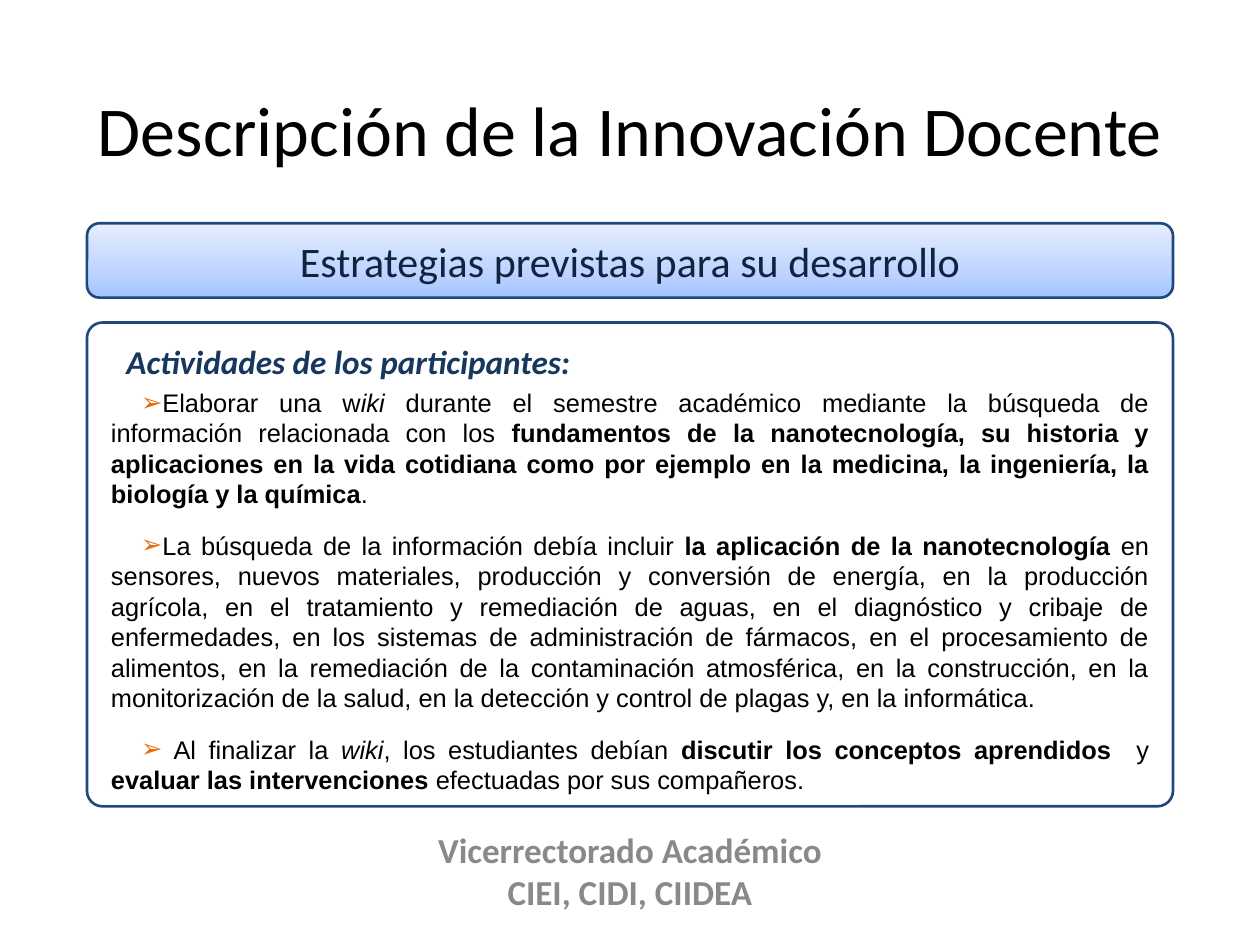
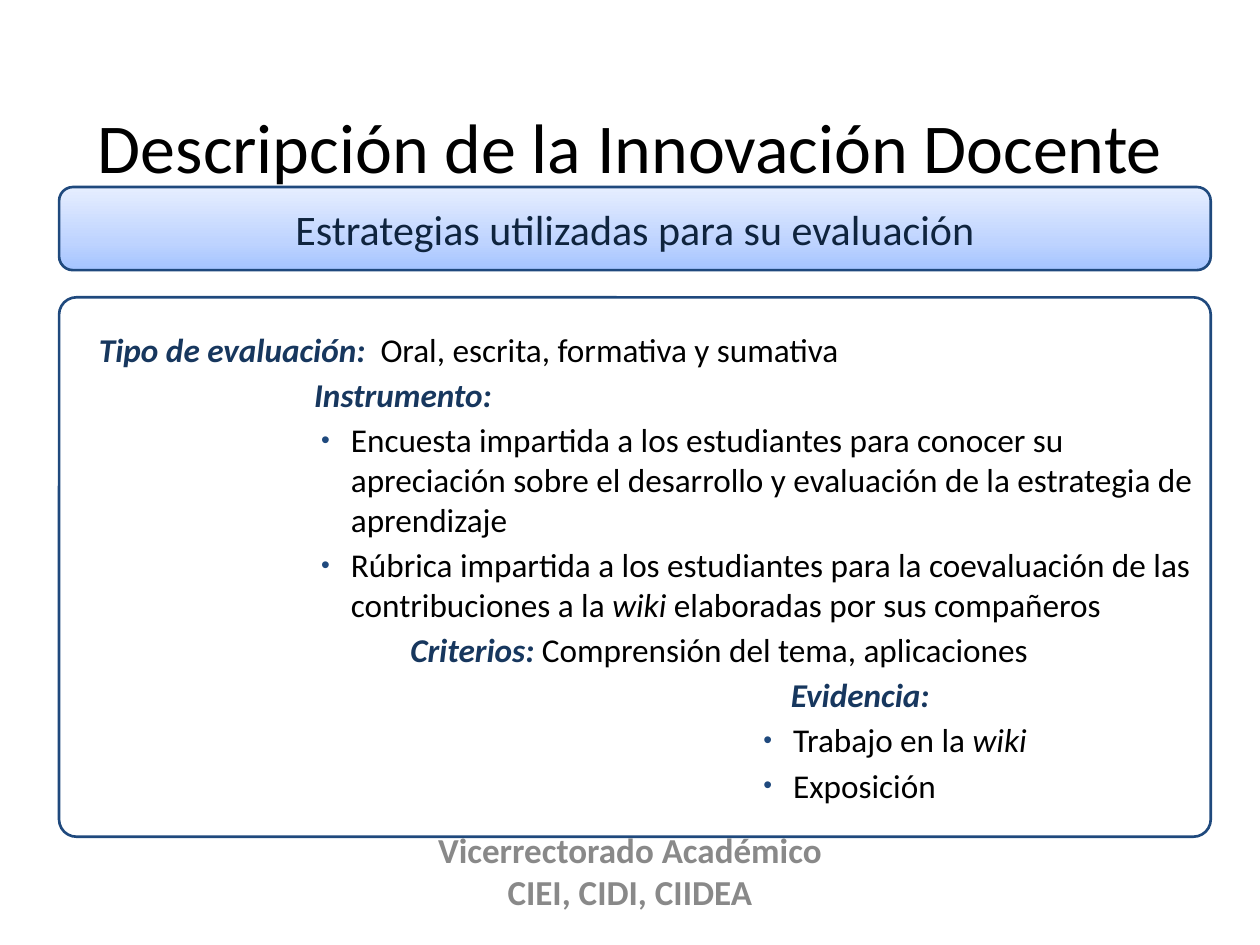
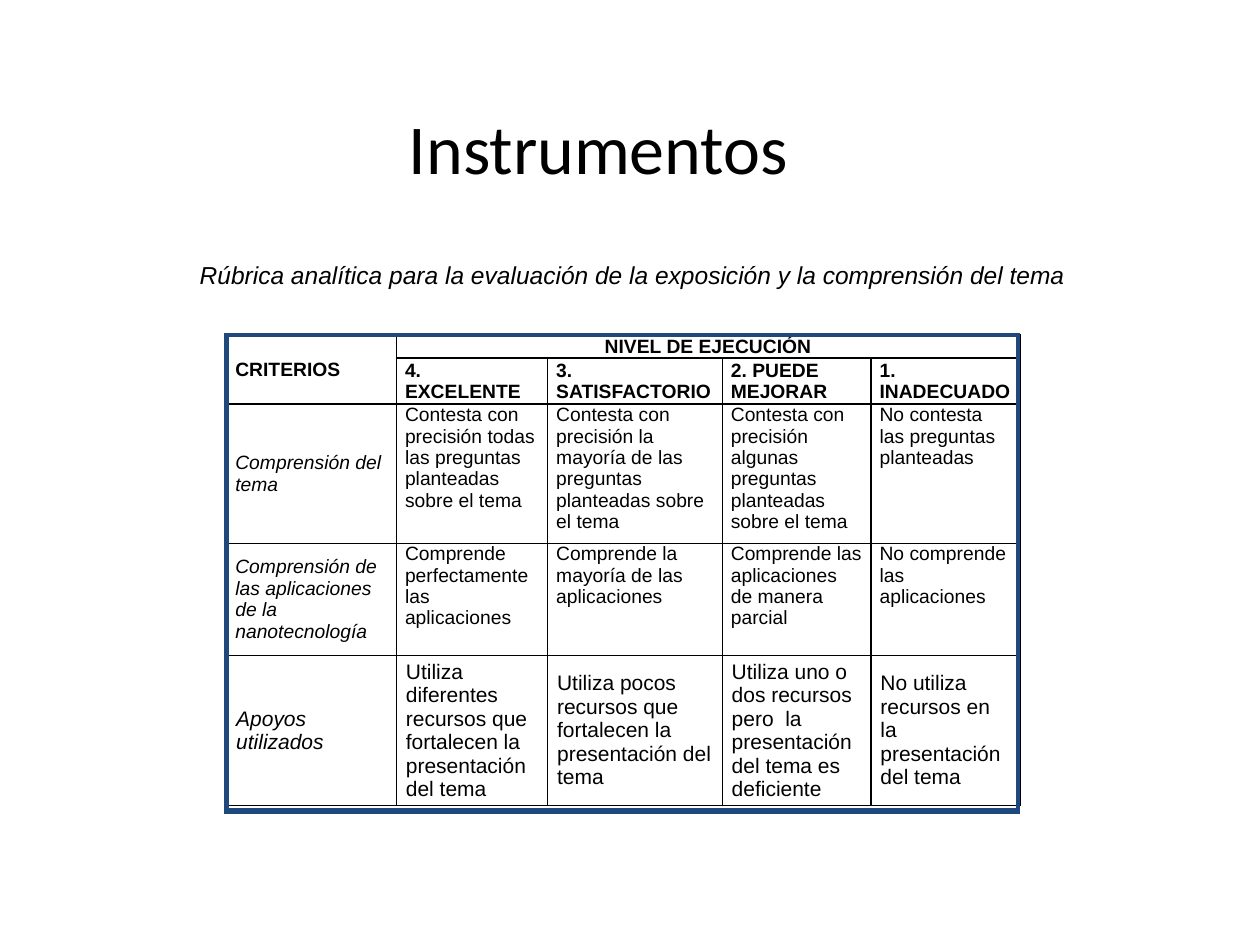
import copy
from dataclasses import dataclass

import lxml.etree
import pptx
import pptx.dml.color
import pptx.enum.shapes
import pptx.enum.text
import pptx.oxml.ns
import pptx.util

Pt = pptx.util.Pt
qn = pptx.oxml.ns.qn
ALIGN = pptx.enum.text.PP_ALIGN
ANCHOR = pptx.enum.text.MSO_ANCHOR
SHAPE = pptx.enum.shapes.MSO_SHAPE


class Theme:
    heading_font = "Calibri"
    text_font = "Arial"
    ink = "000000"
    paper = "FFFFFF"
    outline = "1F497D"
    label = "17375E"
    banner_ink = "0F243E"
    footer_ink = "898989"
    arrow = "E46C0A"
    gradient = [(0, "A4C4FF"), (0.35, "BFD4FF"), (1, "E6EEFF")]
    title_size = 40
    banner_size = 24
    footer_size = 20
    list_size = 19
    caption_size = 14
    activity_size = 14.5
    table_size = 11
    support_size = 12


@dataclass
class Box:
    left: float
    top: float
    width: float
    height: float

    def lengths(self):
        return [Pt(n) for n in (self.left, self.top, self.width, self.height)]


@dataclass
class Item:
    """One paragraph: spans are (text, style), style holding b, i or l (label)."""
    spans: list
    indent: float = 0
    first: float = 0
    bullet: str = ""


def rgb(value):
    return pptx.dml.color.RGBColor.from_string(value)


# ---- Text ----
def style(span, font, size, color=Theme.ink, bold=False, italic=False):
    span.font.name = font
    span.font.size = Pt(size)
    span.font.color.rgb = rgb(color)
    span.font.bold = bold
    span.font.italic = italic


def write(frame, text, font, size, color=Theme.ink, align=ALIGN.CENTER,
          anchor=ANCHOR.MIDDLE, **emphasis):
    frame.text = text
    frame.word_wrap = True
    frame.auto_size = pptx.enum.text.MSO_AUTO_SIZE.NONE
    frame.vertical_anchor = anchor
    for para in frame.paragraphs:
        para.alignment = align
        for span in para.runs:
            style(span, font, size, color, **emphasis)


def set_indent(para, indent, first):
    props = para._p.get_or_add_pPr()
    props.set("marL", str(int(Pt(indent))))
    props.set("indent", str(int(Pt(first))))
    return props


def set_bullet(para, item, color, percent):
    props = set_indent(para, item.indent, item.first)
    if not item.bullet:
        lxml.etree.SubElement(props, qn("a:buNone"))
        return
    tint = lxml.etree.SubElement(props, qn("a:buClr"))
    lxml.etree.SubElement(tint, qn("a:srgbClr"), val=color)
    lxml.etree.SubElement(props, qn("a:buSzPct"), val=str(percent * 1000))
    lxml.etree.SubElement(props, qn("a:buFont"), typeface=Theme.text_font)
    lxml.etree.SubElement(props, qn("a:buChar"), char=item.bullet)


def add_list(page, box, items, font, size, gap, align, bullet_color, percent):
    body = page.placeholders[1]
    body.left, body.top, body.width, body.height = box.lengths()
    frame = body.text_frame
    write(frame, "", font, size)
    for index, item in enumerate(items):
        para = frame.add_paragraph() if index else frame.paragraphs[0]
        set_bullet(para, item, bullet_color, percent)
        para.alignment = align
        para.space_before = Pt(gap if index else 0)
        para.space_after = Pt(0)
        for text, marks in item.spans:
            span = para.add_run()
            span.text = text
            label = "l" in marks
            style(span, font, size, Theme.label if label else Theme.ink,
                  bold=label or "b" in marks, italic=label or "i" in marks)


# ---- Shared regions ----
def add_title(page, box, text):
    title = page.shapes.title
    title.left, title.top, title.width, title.height = box.lengths()
    write(title.text_frame, text, Theme.heading_font, Theme.title_size)


def add_rounded(page, box):
    shape = page.shapes.add_shape(SHAPE.ROUNDED_RECTANGLE, *box.lengths())
    shape.shadow.inherit = False
    shape.fill.background()
    shape.line.color.rgb = rgb(Theme.outline)
    shape.line.width = Pt(1.5)
    return shape


def add_panel(page, box):
    panel = add_rounded(page, box)
    panel.adjustments[0] = 0.032
    return panel


def add_banner(page, box, text):
    banner = add_rounded(page, box)
    banner.fill.gradient()
    banner.fill.gradient_angle = 90
    stops = banner._element.spPr.find(qn("a:gradFill")).find(qn("a:gsLst"))
    stops.insert(1, copy.deepcopy(stops[0]))
    for stop, (position, color) in zip(banner.fill.gradient_stops, Theme.gradient):
        stop.position = position
        stop.color.rgb = rgb(color)
    write(banner.text_frame, text, Theme.heading_font, Theme.banner_size,
          Theme.banner_ink)


def add_footer(page):
    footer = page.shapes.add_textbox(*Box(142, 483.5, 436, 28).lengths())
    write(footer.text_frame, "Vicerrectorado Académico\nCIEI, CIDI, CIIDEA",
          Theme.heading_font, Theme.footer_size, Theme.footer_ink, bold=True)


def add_caption(page, box, text):
    caption = page.shapes.add_shape(SHAPE.RECTANGLE, *box.lengths())
    caption.shadow.inherit = False
    caption.fill.solid()
    caption.fill.fore_color.rgb = rgb(Theme.paper)
    caption.line.fill.background()
    frame = caption.text_frame
    write(frame, text, Theme.text_font, Theme.caption_size, italic=True)
    frame.word_wrap = False
    frame.margin_bottom = 0
    set_indent(frame.paragraphs[0], 0, 17.3)


# ---- Tables ----
def set_borders(cell, color, width):
    props = cell._tc.get_or_add_tcPr()
    for index, side in enumerate(("a:lnL", "a:lnR", "a:lnT", "a:lnB")):
        line = lxml.etree.Element(qn(side), w=str(int(Pt(width))))
        fill = lxml.etree.SubElement(line, qn("a:solidFill"))
        lxml.etree.SubElement(fill, qn("a:srgbClr"), val=color)
        props.insert(index, line)


def add_grid(page, box, widths, heights, color, line_width):
    table = page.shapes.add_table(len(heights), len(widths), *box.lengths()).table
    table.first_row = table.horz_banding = False
    for column, width in zip(table.columns, widths):
        column.width = Pt(width)
    for row, height in zip(table.rows, heights):
        row.height = Pt(height)
    for cell in table.iter_cells():
        cell.fill.background()
        set_borders(cell, color, line_width)
    return table


def add_frame(page, box, line_width):
    add_grid(page, box, [box.width], [box.height], Theme.outline, line_width)


def add_rubric(page, box, rows, widths, heights):
    table = add_grid(page, box, widths, heights, Theme.ink, 1)
    last = len(rows) - 1
    for r, texts in enumerate(rows):
        for c, text in enumerate(texts):
            cell = table.cell(r, c)
            cell.margin_left = cell.margin_right = Pt(5.4 if r == last else 4.9)
            cell.margin_top = cell.margin_bottom = 0
            centred = c == 0 or r < 2 or r == last
            cell.vertical_anchor = ANCHOR.MIDDLE if centred else ANCHOR.TOP
            cell.text = text
            for span in cell.text_frame.paragraphs[0].runs:
                style(span, Theme.text_font,
                      Theme.support_size if r == last else Theme.table_size,
                      bold=r < 2, italic=c == 0 and r > 1)
    table.cell(0, 0).merge(table.cell(1, 0))
    table.cell(0, 1).merge(table.cell(0, len(widths) - 1))
    table.cell(0, 1).text_frame.paragraphs[0].alignment = ALIGN.CENTER


# ---- Content ----
INNOVATION = "Descripción de la Innovación Docente"

ACTIVITIES = [
    [("Elaborar una w", ""), ("iki", "i"),
     (" durante el semestre académico mediante la búsqueda de información "
      "relacionada con los ", ""),
     ("fundamentos de la nanotecnología, su historia y aplicaciones en la vida "
      "cotidiana como por ejemplo en la medicina, la ingeniería, la biología y "
      "la química", "b"), (". ", "")],
    [("La búsqueda de la información debía incluir ", ""),
     ("la aplicación de la nanotecnología ", "b"),
     ("en sensores, nuevos materiales, producción y conversión de energía, en la "
      "producción agrícola, en el tratamiento y remediación de aguas, en el "
      "diagnóstico y cribaje de enfermedades, en los sistemas de administración "
      "de fármacos, en el procesamiento de alimentos, en la remediación de la "
      "contaminación atmosférica, en la construcción, en la monitorización de la "
      "salud, en la detección y control de plagas y, en la informática.", "")],
    [(" Al finalizar la ", ""), ("wiki", "i"), (", los estudiantes debían ", ""),
     ("discutir los conceptos aprendidos  ", "b"), ("y ", ""),
     ("evaluar las intervenciones", "b"),
     (" efectuadas por sus compañeros.", "")],
]

EVALUATION = [
    Item([("Tipo de evaluación:  ", "l"),
          ("Oral, escrita, formativa y sumativa", "")], 13),
    Item([("Instrumento:", "l")], 136),
    Item([("Encuesta impartida a los estudiantes para conocer su apreciación sobre "
           "el desarrollo y evaluación de la estrategia de aprendizaje", "")],
         157, -17, "•"),
    Item([("Rúbrica impartida a los estudiantes para la coevaluación de las "
           "contribuciones a la ", ""), ("wiki", "i"),
          (" elaboradas por sus compañeros", "")], 157, -17, "•"),
    Item([("Criterios: ", "l"), ("Comprensión del tema, aplicaciones", "")], 191),
    Item([("Evidencia:", "l")], 408.4),
    Item([("Trabajo en la ", ""), ("wiki", "i")], 409.7, -17, "•"),
    Item([("Exposición", "")], 409.7, -17, "•"),
]

RUBRIC = [
    ["CRITERIOS", "NIVEL DE EJECUCIÓN", "", "", ""],
    ["", "4. EXCELENTE", "3. SATISFACTORIO", "2. PUEDE MEJORAR", "1. INADECUADO"],
    ["Comprensión del tema",
     "Contesta con precisión todas las preguntas planteadas sobre el tema",
     "Contesta con precisión la mayoría de las preguntas planteadas sobre el tema",
     "Contesta con precisión algunas preguntas planteadas sobre el tema",
     "No contesta las preguntas planteadas"],
    ["Comprensión de las aplicaciones de la nanotecnología",
     "Comprende perfectamente las aplicaciones",
     "Comprende la mayoría de las aplicaciones",
     "Comprende las aplicaciones de manera parcial",
     "No comprende las aplicaciones"],
    ["Apoyos utilizados",
     "Utiliza diferentes recursos que fortalecen la presentación del tema",
     "Utiliza pocos recursos que fortalecen la presentación del tema",
     "Utiliza uno o dos recursos pero  la presentación del tema es deficiente",
     "No utiliza recursos en la presentación del tema"],
]


# ---- Slides ----
def build_activities(page):
    add_title(page, Box(0, 28.3, 720, 90), INNOVATION)
    box = Box(49.7, 184.3, 620.6, 276.5)
    panel = add_panel(page, box)
    panel.text_frame.margin_left = Pt(20)
    panel.text_frame.margin_top = Pt(7.9)
    write(panel.text_frame, "Actividades de los participantes:",
          Theme.heading_font, Theme.list_size, Theme.label, ALIGN.LEFT,
          ANCHOR.TOP, bold=True, italic=True)
    add_banner(page, Box(box.left, 127.6, box.width, 42.5),
               "Estrategias previstas para su desarrollo")
    add_footer(page)
    items = [Item(spans, 0, 17.3, "➢") for spans in ACTIVITIES]
    add_list(page, Box(box.left + 6.5, box.top + 32, box.width - 13, 242.6),
             items, Theme.text_font, Theme.activity_size, 12, ALIGN.JUSTIFY,
             Theme.arrow, 100)


def build_evaluation(page):
    add_title(page, Box(0, 38.2, 720, 90), INNOVATION)
    box = Box(33.8, 169.9, 658.1, 308.2)
    add_panel(page, box)
    add_banner(page, Box(box.left, 106.9, box.width, 47.5),
               "Estrategias utilizadas para su evaluación")
    add_footer(page)
    add_list(page, Box(box.left + 2.5, box.top, box.width - 3, box.height),
             EVALUATION, Theme.heading_font, Theme.list_size, 3, ALIGN.LEFT,
             Theme.outline, 75)


def build_instruments(page):
    box = Box(129.6, 191.5, 453.2, 269)
    add_rubric(page, box, RUBRIC, [97, 86.4, 99.8, 85, 85],
               [13, 26.5, 79.5, 64, 86])
    add_caption(page, Box(88.6, 144.7, 528.5, 20.9),
                "Rúbrica analítica para la evaluación de la exposición y la "
                "comprensión del tema")
    add_title(page, Box(225.3, 56.2, 233.3, 55.4), "Instrumentos")
    for extra, line_width in ((1.7, 1), (3.2, 3)):
        add_frame(page, Box(box.left, box.top, 452.2, box.height + extra),
                  line_width)


def main():
    deck = pptx.Presentation()
    deck.slide_width, deck.slide_height = Pt(720), Pt(540)
    for layout, build in ((1, build_activities), (1, build_evaluation),
                          (5, build_instruments)):
        build(deck.slides.add_slide(deck.slide_layouts[layout]))
    deck.save("out.pptx")


if __name__ == "__main__":
    main()
